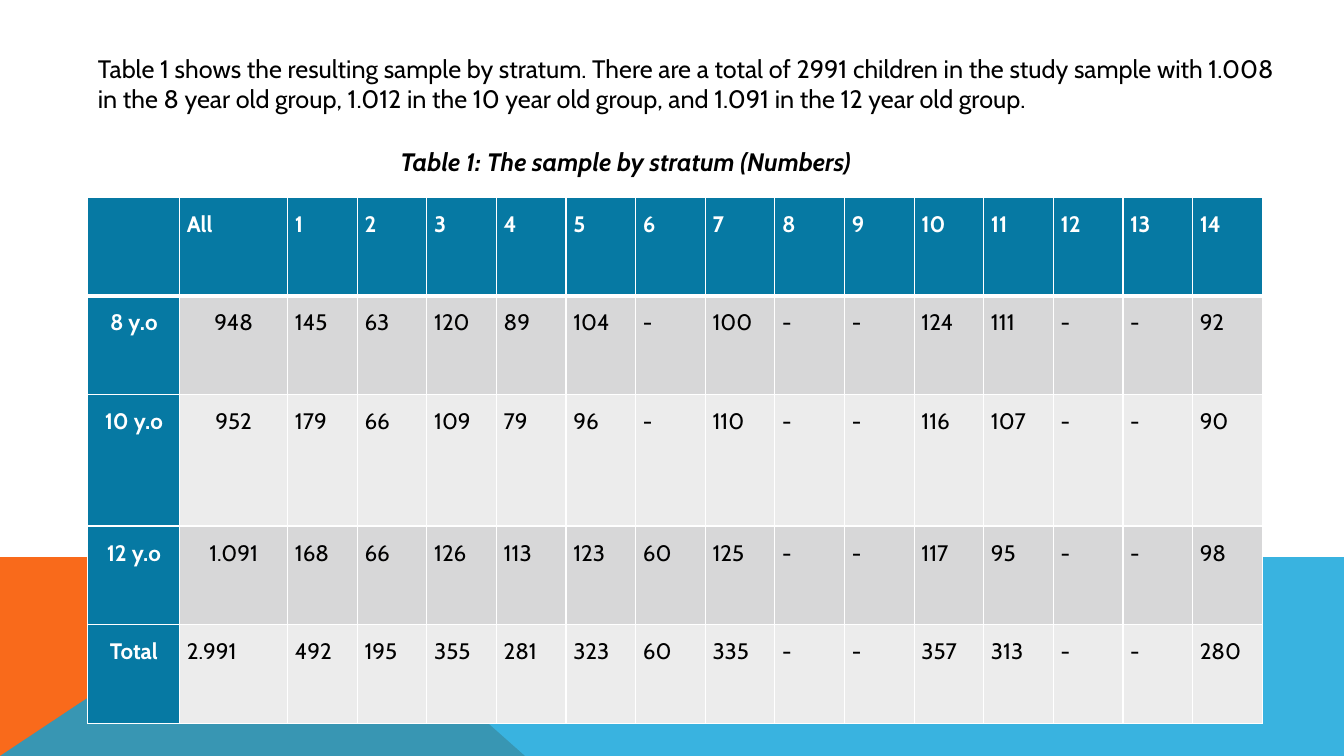
from dataclasses import dataclass
from lxml.etree import SubElement
from pptx import Presentation
from pptx.dml.color import RGBColor
from pptx.enum.text import MSO_ANCHOR, MSO_AUTO_SIZE, PP_ALIGN
from pptx.oxml.ns import qn
from pptx.util import Pt

INTRO = ("Table 1 shows the resulting sample by stratum. There are a total of 2991 children "
         "in the study sample with 1.008 in the 8 year old group, 1.012 in the 10 year old group, "
         "and 1.091 in the 12 year old group.")
CAPTION = "Table 1: The sample by stratum (Numbers)"
ROWS = [
    ["", "All", *map(str, range(1, 15))],
    ["8 y.o", "948", "145", "63", "120", "89", "104", "-", "100", "-", "-", "124", "111", "-", "-", "92"],
    ["10 y.o", "952", "179", "66", "109", "79", "96", "-", "110", "-", "-", "116", "107", "-", "-", "90"],
    ["12 y.o", "1.091", "168", "66", "126", "113", "123", "60", "125", "-", "-", "117", "95", "-", "-", "98"],
    ["Total", "2.991", "492", "195", "355", "281", "323", "60", "335", "-", "-", "357", "313", "-", "-", "280"],
]


@dataclass(frozen=True)
class Theme:
    font: str = "Cabin"
    text_size: int = 18
    cell_size: int = 16
    black: str = "000000"
    white: str = "FFFFFF"
    header: str = "0679A3"
    bands: tuple = ("ECECEC", "D7D7D8")
    orange: str = "F96A1B"
    blue: str = "08A1D9"


T = Theme()
WIDTH, HEIGHT = 960, 540
TABLE = (62.8, 141, 838.8, 375.4)
LABEL_W, ALL_W = 65.6, 77.1
ROW_H, TALL_H, TALL_ROW = 70.4, 94, 2
BAND_TOP = 397.6
BANDS = [
    (T.orange, 100, [(0, HEIGHT), (0, BAND_TOP), (214.6, BAND_TOP), (375, HEIGHT)]),
    (T.blue, 80, [(0, HEIGHT), (214, BAND_TOP), (WIDTH, BAND_TOP), (WIDTH, HEIGHT)]),
]


def rgb(color):
    return RGBColor.from_string(color)


def style(p, size, color, bold=False, italic=False):
    f = p.font
    f.name, f.size, f.bold, f.italic = T.font, Pt(size), bold, italic
    f.color.rgb = rgb(color)


def place_text(sp, box, text, **look):
    sp.left, sp.top, sp.width, sp.height = map(Pt, box)
    tf = sp.text_frame
    tf.word_wrap = True
    tf.auto_size = MSO_AUTO_SIZE.NONE
    tf.vertical_anchor = MSO_ANCHOR.TOP
    tf.text = text
    p = tf.paragraphs[0]
    p.alignment = PP_ALIGN.LEFT
    style(p, T.text_size, T.black, **look)


def add_band(s, color, opacity, points):
    fb = s.shapes.build_freeform(*points[0], scale=Pt(1))
    fb.add_line_segments(points[1:], close=True)
    sp = fb.convert_to_shape()
    sp.shadow.inherit = False
    sp.line.fill.background()
    sp.fill.solid()
    sp.fill.fore_color.rgb = rgb(color)
    if opacity < 100:
        clr = sp.fill._xPr.find(qn("a:solidFill"))[0]
        SubElement(clr, qn("a:alpha"), val=str(opacity * 1000))


def add_borders(cell, row):
    tc_pr = cell._tc.get_or_add_tcPr()
    weights = {"L": 1, "R": 1, "T": 1, "B": 1 if row else 3}
    if row == 1:
        del weights["T"]
    for side, weight in weights.items():
        ln = SubElement(tc_pr, qn(f"a:ln{side}"), w=str(Pt(weight)))
        SubElement(SubElement(ln, qn("a:solidFill")), qn("a:srgbClr"), val=T.white)


def fill_cell(cell, text, row, col):
    heading = row == 0 or col == 0
    add_borders(cell, row)
    cell.fill.solid()
    cell.fill.fore_color.rgb = rgb(T.header if heading else T.bands[row % 2])
    cell.margin_left = cell.margin_right = Pt(5.2)
    cell.margin_top = cell.margin_bottom = 0
    cell.text = text
    p = cell.text_frame.paragraphs[0]
    p.line_spacing = 1.5
    centred = row > 0 and (col == 0 or (col == 1 and row < len(ROWS) - 1))
    p.alignment = PP_ALIGN.CENTER if centred else PP_ALIGN.LEFT
    style(p, T.cell_size, T.white if heading else T.black, bold=heading)


def add_sample_table(s):
    tbl = s.shapes.add_table(len(ROWS), len(ROWS[0]), *map(Pt, TABLE)).table
    stratum_w = (TABLE[2] - LABEL_W - ALL_W) / (len(ROWS[0]) - 2)
    for col, column in enumerate(tbl.columns):
        column.width = Pt((LABEL_W, ALL_W)[col] if col < 2 else stratum_w)
    for row, values in enumerate(ROWS):
        tbl.rows[row].height = Pt(TALL_H if row == TALL_ROW else ROW_H)
        for col, text in enumerate(values):
            fill_cell(tbl.cell(row, col), text, row, col)


def main():
    prs = Presentation()
    prs.slide_width, prs.slide_height = Pt(WIDTH), Pt(HEIGHT)
    s = prs.slides.add_slide(prs.slide_layouts[5])
    for band in BANDS:
        add_band(s, *band)
    place_text(s.shapes.add_textbox(0, 0, 0, 0), (62.8, 34.6, 862, 51), INTRO)
    place_text(s.shapes.title, (278.8, 100.8, 399, 29), CAPTION, bold=True, italic=True)
    add_sample_table(s)
    prs.save("out.pptx")


if __name__ == "__main__":
    main()
